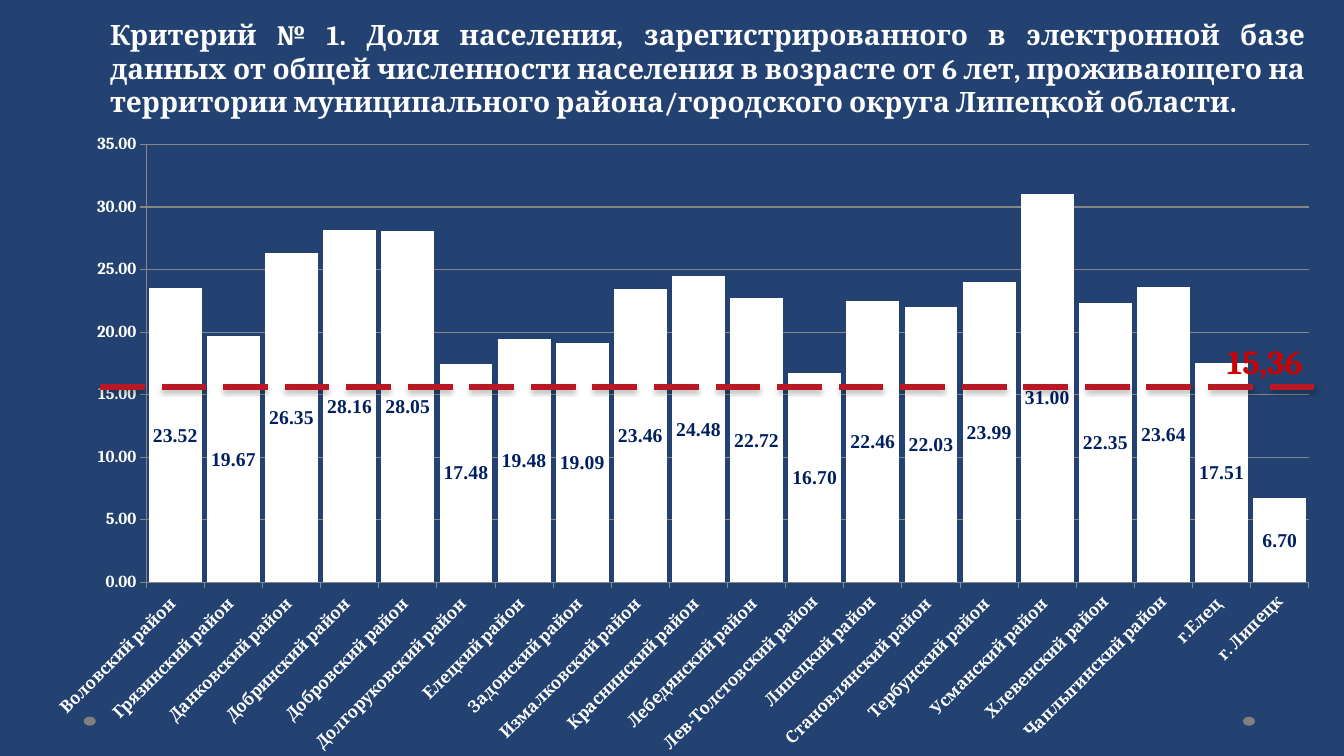
from dataclasses import dataclass

from lxml import etree
from pptx import Presentation
from pptx import util as u
from pptx.chart import data as chart_data
from pptx.dml import color
from pptx.enum import chart as ch, dml, shapes, text
from pptx.oxml import parse_xml
from pptx.oxml.ns import nsdecls, qn


@dataclass(frozen=True)
class Theme:
    """Colours, fonts and type sizes of the slide."""
    back: str = "234271"
    white: str = "FFFFFF"
    label: str = "002060"
    grid: str = "868686"
    dot: str = "808080"
    dash: str = "B81824"
    mark: str = "CC0000"
    shadow: str = "000000"
    head_font: str = "Cambria"
    label_font: str = "Times New Roman"
    title_size: int = 20
    mark_size: int = 24
    label_size: int = 14
    axis_size: int = 12


T = Theme()
TITLE = ("Критерий № 1. Доля населения, зарегистрированного в электронной базе "
         "данных от общей численности населения в возрасте от 6 лет, проживающего на "
         "территории муниципального района/городского округа Липецкой области. ")
PEAK = "Усманский район "
SHARES = {
    "Воловский район ": 23.52, "Грязинский район ": 19.67,
    "Данковский район ": 26.35, "Добринский район ": 28.16,
    "Добровский район ": 28.05, "Долгоруковский район ": 17.48,
    "Елецкий район ": 19.48, "Задонский район ": 19.09,
    "Измалковский район ": 23.46, "Краснинский район ": 24.48,
    "Лебедянский район ": 22.72, "Лев-Толстовский район": 16.7,
    "Липецкий район": 22.46, "Становлянский район ": 22.03,
    "Тербунский район ": 23.99, PEAK: 31,
    "Хлевенский район": 22.35, "Чаплыгинский район": 23.64,
    "г.Елец ": 17.51, "г. Липецк": 6.7,
}


def rgb(value):
    """Return a colour object for a hex value."""
    return color.RGBColor.from_string(value)


def set_font(font, name, size, colour):
    """Apply a bold type style."""
    font.name, font.size, font.bold = name, u.Pt(size), True
    font.color.rgb = rgb(colour)


def add_text(s, box, content, size, colour, align, wrap):
    """Add a text box with one run."""
    tb = s.shapes.add_textbox(*map(u.Pt, box))
    tf = tb.text_frame
    tf.word_wrap = wrap
    p = tf.paragraphs[0]
    p.alignment = align
    r = p.add_run()
    r.text = content
    set_font(r.font, T.head_font, size, colour)


def add_dot(s, left):
    """Add a small footer ellipse."""
    sp = s.shapes.add_shape(shapes.MSO_SHAPE.OVAL, u.Pt(left), u.Pt(511.9), u.Pt(8.6), u.Pt(6.5))
    sp.shadow.inherit = False
    sp.fill.solid()
    sp.fill.fore_color.rgb = rgb(T.dot)
    sp.line.fill.background()


def add_threshold(s, left, right, y):
    """Add the dashed threshold line with its soft shadow."""
    cx = s.shapes.add_connector(shapes.MSO_CONNECTOR.STRAIGHT, u.Pt(left), u.Pt(y), u.Pt(right), u.Pt(y))
    cx.line.color.rgb = rgb(T.dash)
    cx.line.width = u.Pt(4)
    cx.line.dash_style = dml.MSO_LINE.LONG_DASH
    cx._element.spPr.append(parse_xml(
        f'<a:effectLst {nsdecls("a")}><a:outerShdw blurRad="{u.Pt(3.1)}" dist="{u.Pt(1.8)}" '
        f'dir="5400000" rotWithShape="0"><a:srgbClr val="{T.shadow}"><a:alpha val="35000"/>'
        '</a:srgbClr></a:outerShdw></a:effectLst>'))


def make_layout(**settings):
    """Build a manual chart layout element."""
    layout = etree.Element(qn("c:layout"))
    manual = etree.SubElement(layout, qn("c:manualLayout"))
    for tag, value in settings.items():
        etree.SubElement(manual, qn(f"c:{tag}"), val=str(value))
    return layout


def style_axis(axis):
    """Give an axis its type, line and tick style."""
    set_font(axis.tick_labels.font, T.head_font, T.axis_size, T.white)
    axis.format.line.color.rgb = rgb(T.grid)
    axis.major_tick_mark = ch.XL_TICK_MARK.OUTSIDE
    axis.minor_tick_mark = ch.XL_TICK_MARK.NONE


def style_axes(chart):
    """Style both axes, the scale and the gridlines."""
    cat, val = chart.category_axis, chart.value_axis
    style_axis(cat)
    style_axis(val)
    cat._element.find(qn("c:txPr")).find(qn("a:bodyPr")).set("rot", "-2700000")
    val.minimum_scale, val.maximum_scale, val.major_unit = 0, 35, 5
    val.tick_labels.number_format = "0.00"
    val.tick_labels.number_format_is_linked = False
    val.major_gridlines.format.line.color.rgb = rgb(T.grid)


def style_bars(plot, chart_height):
    """Style the bars and their value labels."""
    plot.gap_width, plot.overlap = 10, 100
    plot.vary_by_categories = False
    series = plot.series[0]
    series.format.fill.solid()
    series.format.fill.fore_color.rgb = rgb(T.white)
    labels = series.data_labels
    labels.show_value = True
    labels.number_format, labels.number_format_is_linked = "0.00", False
    labels.position = ch.XL_LABEL_POSITION.CENTER
    set_font(labels.font, T.label_font, T.label_size, T.label)
    peak = series.points[list(SHARES).index(PEAK)].data_label
    set_font(peak.font, T.label_font, T.label_size, T.label)
    peak.position = ch.XL_LABEL_POSITION.CENTER
    idx = labels._element.find(qn("c:dLbl")).find(qn("c:idx"))
    idx.addnext(make_layout(x=0, y=6.5 / chart_height))


def place_plot(chart, box, plot_box):
    """Fix the inner plot rectangle, given in slide points, and fill it."""
    left, top, width, height = box
    x, y, w, h = plot_box
    area = chart._chartSpace.chart.plotArea
    for old in area.findall(qn("c:layout")):
        area.remove(old)
    area.insert(0, make_layout(layoutTarget="inner", xMode="edge", yMode="edge",
                               x=(x - left) / width, y=(y - top) / height,
                               w=w / width, h=h / height))
    area.append(parse_xml(
        f'<c:spPr {nsdecls("c", "a")}><a:solidFill><a:srgbClr val="{T.back}"/></a:solidFill></c:spPr>'))


def add_share_chart(s, box, plot_box):
    """Add the column chart of shares by district."""
    data = chart_data.CategoryChartData(number_format="0.00")
    data.categories = list(SHARES)
    data.add_series("Series 1", list(SHARES.values()))
    chart = s.shapes.add_chart(ch.XL_CHART_TYPE.COLUMN_STACKED, *map(u.Pt, box), data).chart
    chart.has_legend = chart.has_title = False
    chart.font.name, chart.font.size = T.label_font, u.Pt(T.axis_size)
    style_axes(chart)
    style_bars(chart.plots[0], box[3])
    place_plot(chart, box, plot_box)


def main():
    """Build and save the slide."""
    prs = Presentation()
    prs.slide_width, prs.slide_height = u.Pt(960), u.Pt(540)
    s = prs.slides.add_slide(prs.slide_layouts[6])
    s.background.fill.solid()
    s.background.fill.fore_color.rgb = rgb(T.back)
    for left in (887.8, 59.8):
        add_dot(s, left)
    add_text(s, (71.5, 9, 867.6, 79.9), TITLE, T.title_size, T.white, text.PP_ALIGN.JUSTIFY, True)
    add_share_chart(s, (21.6, 87.1, 931.7, 460.8), (104.5, 103.2, 830.5, 312.8))
    add_threshold(s, 71.5, 939.6, 276.5)
    add_text(s, (869.3, 239.8, 69.8, 36), "15,36", T.mark_size, T.mark, text.PP_ALIGN.LEFT, False)
    prs.save("out.pptx")


if __name__ == "__main__":
    main()
